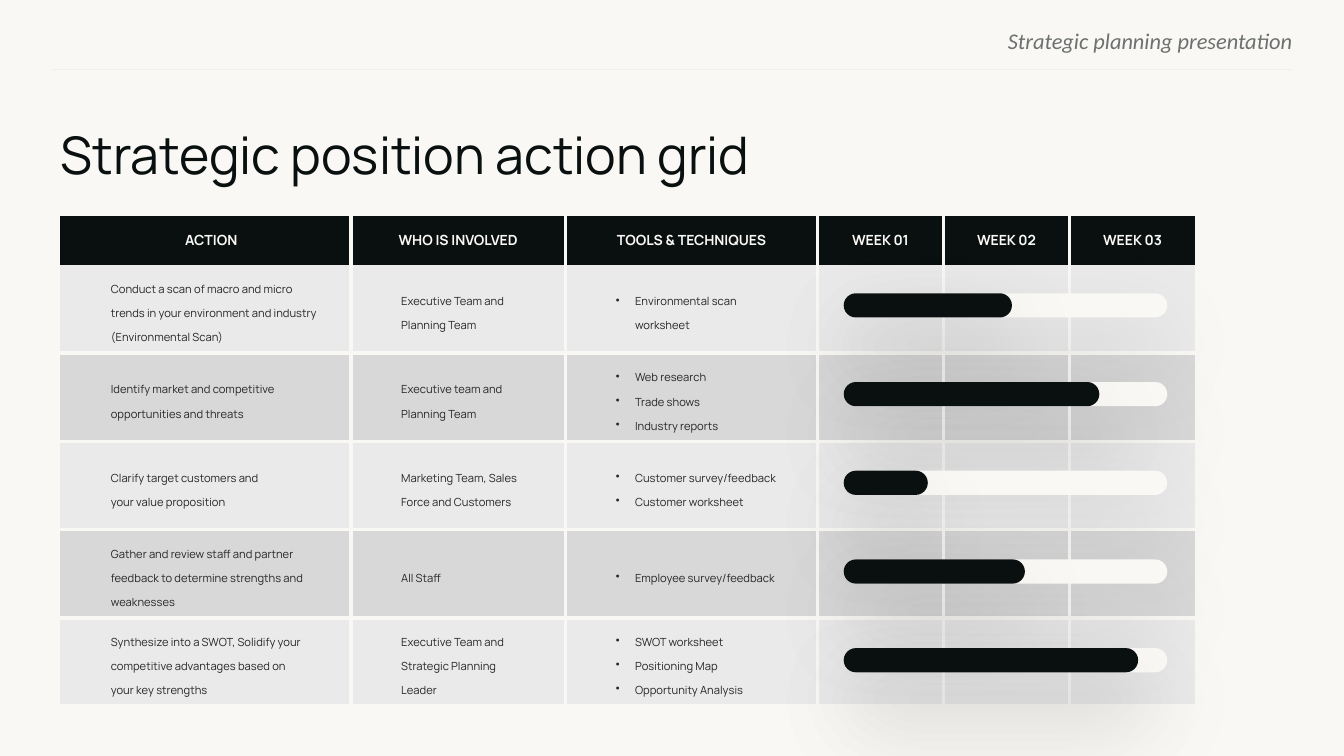
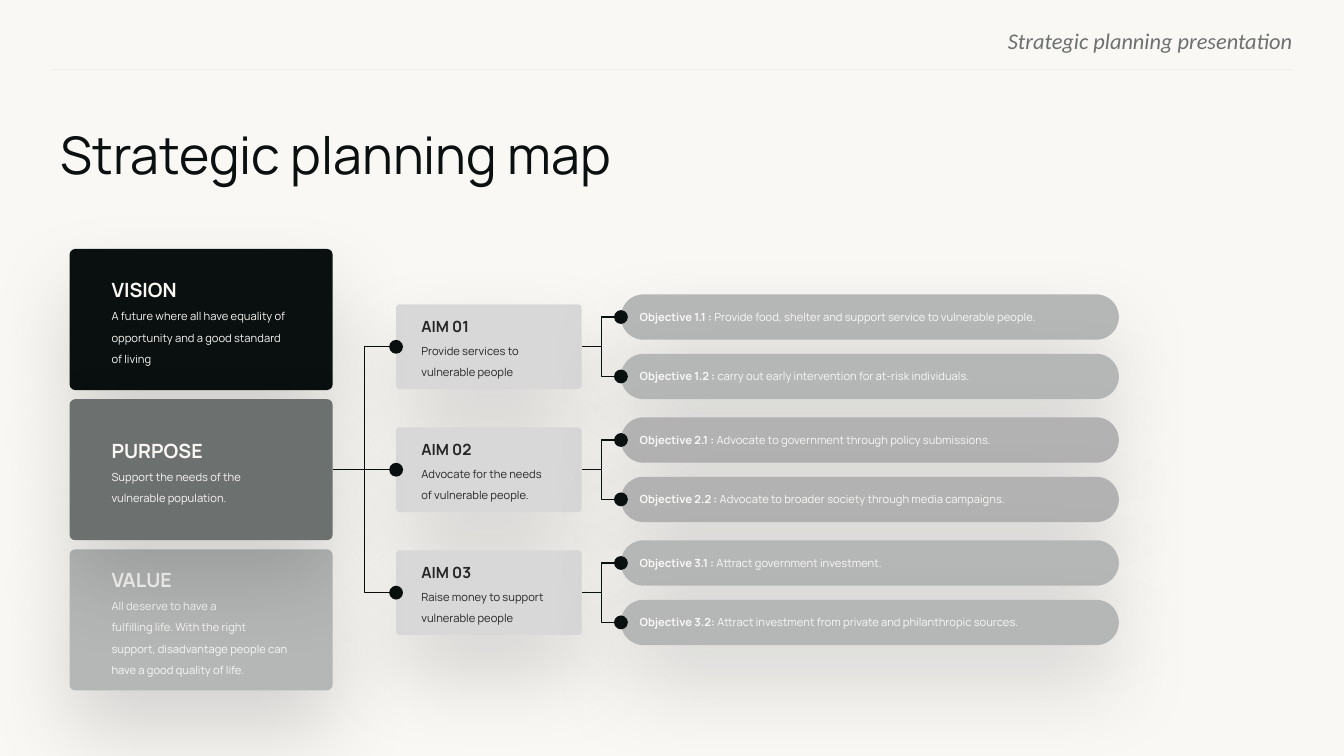
import copy

from lxml import etree
from pptx import Presentation
from pptx import util as u
from pptx.dml.color import RGBColor
from pptx.enum import shapes, text
from pptx.oxml.ns import qn

INK = RGBColor(0x09, 0x10, 0x0F)
PAPER = RGBColor(0xF9, 0xF8, 0xF5)
BODY = RGBColor(0x26, 0x26, 0x26)
SLATE = RGBColor(0x6C, 0x70, 0x6F)
ASH = RGBColor(0xB5, 0xB7, 0xB7)
SILVER = RGBColor(0xB2, 0xB2, 0xB2)
MIST = RGBColor(0xD8, 0xD8, 0xD8)
PEARL = RGBColor(0xEA, 0xEA, 0xEA)
RULE = RGBColor(0xEF, 0xEF, 0xEF)

GRID = u.Inches(0.1)
SLIDE_COLS, SLIDE_ROWS = 133.33, 75
FONT = "Manrope"

TABLE_COLS = (28.8, 21.3, 25, 12.5, 12.5, 12.5)
HEAD_ROW, BODY_ROW = 4.9, 8.75
HEADINGS = ("ACTION", "WHO IS INVOLVED", "TOOLS & TECHNIQUES", "WEEK 01", "WEEK 02", "WEEK 03")
# action, people, tools, share of the three weeks
ACTIONS = (
    ("Conduct a scan of macro and micro trends in your environment and industry (Environmental Scan)",
     "Executive Team and Planning Team", ("Environmental scan worksheet",), 0.52),
    ("Identify market and competitive opportunities and threats",
     "Executive team and Planning Team", ("Web research", "Trade shows", "Industry reports"), 0.79),
    ("Clarify target customers and \nyour value proposition",
     "Marketing Team, Sales Force and Customers",
     ("Customer survey/feedback", "Customer worksheet"), 0.26),
    ("Gather and review staff and partner feedback to determine strengths and weaknesses",
     "All Staff", ("Employee survey/feedback",), 0.56),
    ("Synthesize into a SWOT, Solidify your competitive advantages based on\nyour key strengths",
     "Executive Team and Strategic Planning Leader",
     ("SWOT worksheet", "Positioning Map", "Opportunity Analysis"), 0.91),
)

# heading, statement, fill, place in the stack; the last one is drawn on top
PILLARS = (
    ("VISION", "A future where all have equality of opportunity and a good standard of living", INK, 0),
    ("VALUE", "All deserve to have a\nfulfilling life. With the right support, "
     "disadvantage people can have a good quality of life.", ASH, 2),
    ("PURPOSE", "Support the needs of the\nvulnerable population.", SLATE, 1),
)
AIMS = (
    ("AIM 01", "Provide services to\nvulnerable people", ASH,
     (("Objective 1.1 : ", "Provide food, shelter and support service to vulnerable people."),
      ("Objective 1.2 : ", "carry out early intervention for at-risk individuals."))),
    ("AIM 02", "Advocate for the needs\nof vulnerable people.", SILVER,
     (("Objective 2.1 : ", "Advocate to government through policy submissions."),
      ("Objective 2.2 : ", "Advocate to broader society through media campaigns."))),
    ("AIM 03", "Raise money to support vulnerable people", ASH,
     (("Objective 3.1 : ", "Attract government investment."),
      ("Objective 3.2: ", "Attract investment from private and philanthropic sources."))),
)


def cells(*counts):
    """Turn counts of grid cells into lengths."""
    return [round(count * GRID) for count in counts]


def add_xml(parent, tag, **attributes):
    return etree.SubElement(parent, qn(tag), attributes)


def write(para, words, size, color, bold=False, font=FONT, italic=False):
    """Add a run for each line of words, with line breaks of the same size between."""
    span = None
    for line in words.split("\n"):
        if span is not None:
            para.add_line_break()
            para._p[-1].append(copy.deepcopy(span._r.rPr))
        span = para.add_run()
        span.text = line
        span.font.size = u.Pt(size)
        span.font.name = font
        span.font.bold = bold
        span.font.italic = italic
        span.font.color.rgb = color


def set_margins(frame, left=0, top=0, right=0, bottom=0):
    (frame.margin_left, frame.margin_top,
     frame.margin_right, frame.margin_bottom) = cells(left, top, right, bottom)


def add_line(page, start, end, color, width, dotted_start=False):
    kind = shapes.MSO_CONNECTOR.STRAIGHT if start[1] == end[1] else shapes.MSO_CONNECTOR.ELBOW
    line = page.shapes.add_connector(kind, *cells(*start, *end))
    line.line.color.rgb = color
    line.line.width = u.Pt(width)
    frame = line.element.spPr
    if dotted_start:
        add_xml(frame.find(qn("a:ln")), "a:headEnd", type="oval", w="lg", len="lg")
    add_xml(frame, "a:effectLst")
    return line


def add_card(page, left, top, width, height, fill, corner=0.5):
    """Add a rounded box with a soft shadow below it."""
    card = page.shapes.add_shape(shapes.MSO_SHAPE.ROUNDED_RECTANGLE,
                                 *cells(left, top, width, height))
    card.adjustments[0] = corner
    card.fill.solid()
    card.fill.fore_color.rgb = fill
    card.line.fill.background()
    card.shadow.inherit = False
    shadow = add_xml(card.element.spPr.find(qn("a:effectLst")), "a:outerShdw",
                     blurRad=str(u.Pt(62)), dist=str(u.Pt(28)), dir="5400000",
                     algn="t", rotWithShape="0")
    add_xml(add_xml(shadow, "a:srgbClr", val="000000"), "a:alpha", val="15000")
    return card


def open_text(card, left, right=0):
    """Prepare the text frame of a card and return its first paragraph."""
    frame = card.text_frame
    frame.word_wrap = True
    frame.vertical_anchor = text.MSO_ANCHOR.MIDDLE
    set_margins(frame, left=left, right=right)
    frame.paragraphs[0].alignment = text.PP_ALIGN.LEFT
    return frame.paragraphs[0]


def add_heading_and_body(card, heading, body, size, color, spacing, margins):
    para = open_text(card, *margins)
    para.line_spacing = spacing
    write(para, heading, size, color, bold=True)
    para = card.text_frame.add_paragraph()
    para.alignment = text.PP_ALIGN.LEFT
    para.line_spacing = 1.6
    write(para, body, 8, color)


def add_page(deck, title):
    page = deck.slides.add_slide(deck.slide_layouts.get_by_name("Title Only"))
    box = page.shapes.title
    box.left, box.top, box.width, box.height = cells(6, 12.2, 123, 6.8)
    frame = box.text_frame
    frame.auto_size = text.MSO_AUTO_SIZE.NONE
    frame.vertical_anchor = text.MSO_ANCHOR.TOP
    set_margins(frame)
    para = frame.paragraphs[0]
    para.alignment = text.PP_ALIGN.LEFT
    para.space_after = u.Pt(13)
    write(para, title, 37, INK)
    return page


def furnish_master(deck, page):
    """Set the background and move the header, drawn on page, to the slide master."""
    master = deck.slide_master
    master.background.fill.solid()
    master.background.fill.fore_color.rgb = PAPER
    header = page.shapes.add_textbox(*cells(76.8, 2.7, 51.4, 2.4))
    header.text_frame.word_wrap = True
    set_margins(header.text_frame)
    para = header.text_frame.paragraphs[0]
    para.alignment = text.PP_ALIGN.RIGHT
    write(para, "Strategic planning presentation", 16, SLATE, font="Calibri", italic=True)
    rule = add_line(page, (128.2, 6.9), (5.2, 6.9), RULE, 0.75)
    for number, part in enumerate((header, rule), 90):
        part.element.xpath(".//p:cNvPr")[0].set("id", str(number))
        master.shapes.element.append(part.element)


def set_borders(cell, visible):
    """Draw the named sides in the paper colour and clear the others."""
    properties = cell._tc.get_or_add_tcPr()
    for place, side in enumerate("LRTB"):
        border = add_xml(properties, f"a:ln{side}", w=str(u.Pt(3)))
        if side in visible:
            add_xml(add_xml(border, "a:solidFill"), "a:srgbClr", val=str(PAPER))
        else:
            add_xml(border, "a:noFill")
        properties.insert(place, border)


def add_bullet(para):
    properties = para._p.get_or_add_pPr()
    indent = cells(1.9)[0]
    properties.set("marL", str(indent))
    properties.set("indent", str(-indent))
    add_xml(add_xml(properties, "a:buClr"), "a:srgbClr", val=str(BODY))
    add_xml(properties, "a:buChar", char="•")


def fill_body_cell(cell, lines, bulleted, padding):
    set_margins(cell, 5, padding, 3.1, padding)
    frame = cell.text_frame
    for number, line in enumerate(lines):
        para = frame.add_paragraph() if number else frame.paragraphs[0]
        para.line_spacing = 1.57
        if bulleted:
            add_bullet(para)
        write(para, line, 8, BODY)


def add_action_table(page):
    size = len(ACTIONS) + 1, len(HEADINGS)
    table = page.shapes.add_table(
        *size, *cells(6, 21.4, sum(TABLE_COLS), HEAD_ROW + BODY_ROW * len(ACTIONS))).table
    table.first_row = table.horz_banding = False
    for column, width in zip(table.columns, cells(*TABLE_COLS)):
        column.width = width
    for number, row in enumerate(table.rows):
        row.height = cells(BODY_ROW if number else HEAD_ROW)[0]
        for place, cell in enumerate(row.cells):
            cell.vertical_anchor = text.MSO_ANCHOR.MIDDLE
            cell.fill.solid()
            cell.fill.fore_color.rgb = (PEARL if number % 2 else MIST) if number else INK
            set_borders(cell, "L" * (place > 0) + "R" * (place < size[1] - 1)
                        + "T" * (number > 1) + "B" * (number > 0))
    for place, heading in enumerate(HEADINGS):
        cell = table.cell(0, place)
        set_margins(cell, 1.3 if place else 2.4, 0.7, 1.3, 0.7)
        para = cell.text_frame.paragraphs[0]
        para.alignment = text.PP_ALIGN.CENTER
        write(para, heading, 10, PAPER, bold=True)
    for number, (action, people, tools, _) in enumerate(ACTIONS, 1):
        fill_body_cell(table.cell(number, 0), [action], False, 0)
        fill_body_cell(table.cell(number, 1), [people], False, 0.7)
        fill_body_cell(table.cell(number, 2), tools, True, 0.7)


def add_progress_bars(page):
    left, first_top, pitch, length, height = 83.7, 29.1, 8.8, 32.1, 2.4
    for number, action in enumerate(ACTIONS):
        top = first_top + number * pitch
        add_card(page, left, top, length, height, PAPER)
        add_card(page, left, top, length * action[-1], height, INK)


def add_planning_map(page):
    pillar_left, pillar_width, pillar_height = 6.9, 26.1, 14
    aim_left, aim_width, aim_height = 39.3, 18.4, 8.4
    pill_left, pill_width, pill_height, pill_pitch = 61.6, 49.4, 4.5, 5.9
    pillar_right, aim_right = pillar_left + pillar_width, aim_left + aim_width
    middles = [34.4 + 12.2 * number for number in range(len(AIMS))]
    links = [((aim_left, middle), (pillar_right, middles[1])) for middle in middles]

    for middle, (heading, body, _, _) in zip(middles, AIMS):
        card = add_card(page, aim_left, middle - aim_height / 2, aim_width, aim_height, MIST, 0.04)
        add_heading_and_body(card, heading, body, 11, BODY, 1.16, (2.4, 0))
    for middle, (_, _, fill, objectives) in zip(middles, AIMS):
        for number, (label, words) in enumerate(objectives):
            center = middle + (number - 0.5) * pill_pitch
            pill = add_card(page, pill_left, center - pill_height / 2, pill_width, pill_height, fill)
            para = open_text(pill, 1.2)
            write(para, label, 8, PAPER, bold=True)
            write(para, words, 8, PAPER)
            links.append(((pill_left, center), (aim_right, middle)))
    for start, end in links:
        add_line(page, start, end, INK, 1, dotted_start=True)
    for heading, body, fill, place in PILLARS:
        card = add_card(page, pillar_left, 24.7 + 14.9 * place, pillar_width, pillar_height, fill, 0.04)
        add_heading_and_body(card, heading, body, 14, PAPER, 1.2, (4, 4))


def main():
    deck = Presentation()
    deck.slide_width, deck.slide_height = cells(SLIDE_COLS, SLIDE_ROWS)
    action_page = add_page(deck, "Strategic position action grid")
    furnish_master(deck, action_page)
    add_action_table(action_page)
    add_progress_bars(action_page)
    add_planning_map(add_page(deck, "Strategic planning map"))
    deck.save("out.pptx")


if __name__ == "__main__":
    main()
